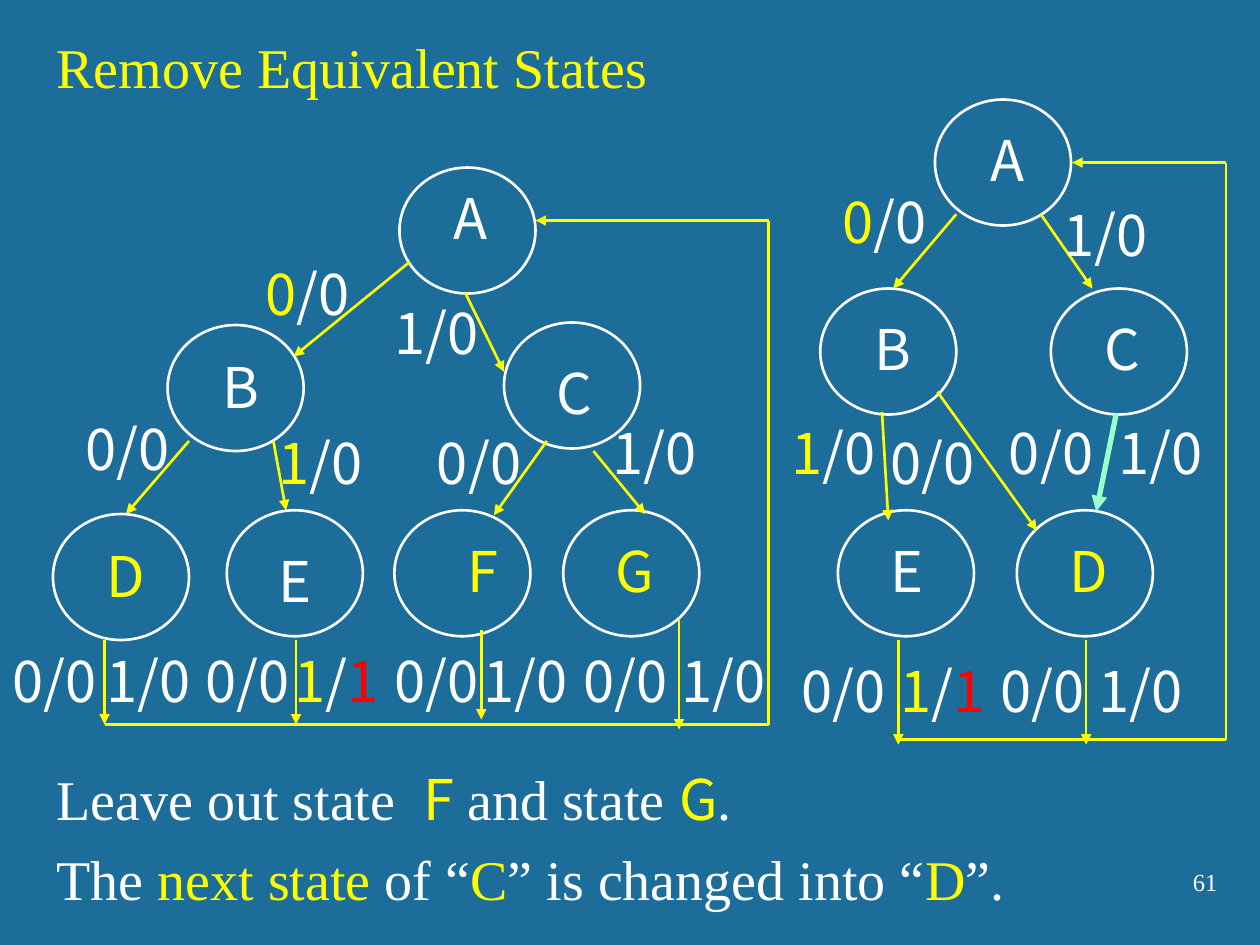
from dataclasses import dataclass

from lxml.etree import SubElement
from pptx import Presentation
from pptx.dml.color import RGBColor
from pptx.enum.shapes import MSO_CONNECTOR as Connector, MSO_SHAPE as Shape
from pptx.enum.text import MSO_AUTO_SIZE as AutoSize, PP_ALIGN as Align
from pptx.oxml.ns import qn
from pptx.util import Inches, Pt


@dataclass(frozen=True)
class Theme:
    background: str = "1C6D9A"
    text: str = "FFFFFF"
    accent: str = "FFFF00"
    output: str = "FF0000"
    changed: str = "99FFCC"
    serif: str = "Times New Roman"
    sans: str = "Noto Sans CJK SC"
    body_size: int = 32
    number_size: int = 14
    thin: float = 1.5
    thick: float = 3


@dataclass(frozen=True)
class Box:
    left: float
    top: float
    width: float
    height: float


@dataclass(frozen=True)
class Diagram:
    """Places are in grid units, measured from the corner of the diagram's box."""
    states: list        # name, x, y, label offset x, label offset y
    transitions: list   # x1, y1, x2, y2
    labels: list        # runs, x, y
    output_row: float
    outputs: list       # runs, x
    drops: list         # x, y1, y2
    return_row: float
    return_tip: float
    changed: tuple = ()


THEME = Theme()
COLUMNS = 100
SLIDE_WIDTH, SLIDE_HEIGHT = Inches(10), Inches(7.5)
UNIT = SLIDE_WIDTH / COLUMNS
STATE_WIDTH, STATE_HEIGHT = 10.8, 10
LETTER_WIDTH, PAIR_WIDTH, LABEL_HEIGHT = 4.2, 8.7, 6.3
EQUIVALENT = "DFG"

ZERO = [("0/0", THEME.text)]
ONE = [("1/0", THEME.text)]
ZERO_MARKED = [("0", THEME.accent), ("/0", THEME.text)]
ONE_MARKED = [("1", THEME.accent), ("/0", THEME.text)]
DETECTED = [("1", THEME.accent), ("/", THEME.text), ("1", THEME.output)]

FULL = Diagram(
    states=[("A", 31.7, 0, 3.3, 0.8), ("B", 13.3, 12.5, 3.4, 1.7),
            ("C", 40, 12.3, 3.2, 2.4), ("D", 4.2, 27.5, 3.3, 1.7),
            ("E", 18, 27.2, 3.1, 2.4), ("F", 31.3, 27.2, 4.8, 1.6),
            ("G", 44.7, 27.2, 3.2, 1.6)],
    transitions=[(32.5, 7.5, 23.3, 15), (36.9, 9.9, 40, 16.2),
                 (15, 21.7, 10, 27.5), (21.7, 21.7, 22.7, 27.2),
                 (43.4, 21.7, 39.2, 27.6), (47.1, 22.5, 51.2, 27.5)],
    labels=[(ZERO_MARKED, 20.1, 6.8), (ONE, 30.3, 9.9), (ZERO, 5.8, 19.1),
            (ONE_MARKED, 21.1, 20.2), (ZERO, 33.7, 20.2), (ONE, 47.6, 19.4)],
    output_row=37.5,
    outputs=[(ZERO, 0), (ONE, 7.5), (ZERO, 15.3), (DETECTED, 22.4),
             (ZERO, 30.3), (ONE, 37.4), (ZERO, 45.3), (ONE, 53.1)],
    drops=[(8.3, 37.5, 44.2), (23.5, 37.5, 44.2),
           (38.2, 36.7, 43.8), (53.9, 35.9, 44.6)],
    return_row=4.2, return_tip=42.5)

REDUCED = Diagram(
    states=[("A", 12.4, 0, 3.4, 1.6), ("B", 3.3, 15, 3.3, 1.6),
            ("C", 21.6, 15, 3.3, 1.6), ("E", 4.7, 32.6, 3.2, 1.6),
            ("D", 18.9, 32.6, 3.2, 1.6)],
    transitions=[(14.1, 9.1, 9.1, 15), (20.8, 9.1, 24.9, 15),
                 (12.6, 23.2, 20.5, 34.2), (8.2, 24.8, 8.7, 33.4)],
    labels=[(ZERO_MARKED, 4.1, 6.5), (ONE, 21.6, 7.5), (ONE_MARKED, 0, 24.8),
            (ZERO, 7.9, 25.6), (ZERO, 17.3, 24.8), (ONE, 26, 24.8)],
    output_row=43.7,
    outputs=[(ZERO, 0.8), (DETECTED, 8.7), (ZERO, 16.6), (ONE, 24.4)],
    drops=[(9.5, 42.9, 51.2), (24.4, 42.9, 51.2)],
    return_row=5, return_tip=23.3,
    changed=(26.8, 24.9, 25.2, 32.7))


def grid(*lengths):
    return [round(length * UNIT) for length in lengths]


def add_text(slide, box, runs, font=THEME.serif, size=THEME.body_size,
             align=Align.LEFT, wrap=False):
    """Each run is (text, colour) or (text, colour, font)."""
    shape = slide.shapes.add_textbox(*grid(box.left, box.top, box.width, box.height))
    frame = shape.text_frame
    frame.word_wrap = wrap
    frame.auto_size = AutoSize.NONE if wrap else AutoSize.SHAPE_TO_FIT_TEXT
    paragraph = frame.paragraphs[0]
    paragraph.alignment = align
    for text, color, *own_font in runs:
        run = paragraph.add_run()
        run.text = text
        run.font.name = own_font[0] if own_font else font
        run.font.size = Pt(size)
        run.font.color.rgb = RGBColor.from_string(color)


def add_line(slide, box, ends, color=THEME.accent, width=THEME.thin, arrow=True):
    x1, y1, x2, y2 = ends
    line = slide.shapes.add_connector(Connector.STRAIGHT, *grid(
        box.left + x1, box.top + y1, box.left + x2, box.top + y2))
    line.line.color.rgb = RGBColor.from_string(color)
    line.line.width = Pt(width)
    if arrow:
        SubElement(line.line._get_or_add_ln(), qn("a:tailEnd"), type="triangle")
    SubElement(line._element.spPr, qn("a:effectLst"))


def add_label(slide, box, runs, x, y, width=PAIR_WIDTH):
    place = Box(box.left + x, box.top + y, width, LABEL_HEIGHT)
    add_text(slide, place, runs, font=THEME.sans)


def add_state(slide, box, name, x, y, label_x, label_y):
    circle = slide.shapes.add_shape(Shape.OVAL, *grid(
        box.left + x, box.top + y, STATE_WIDTH, STATE_HEIGHT))
    circle.shadow.inherit = False
    circle.fill.background()
    circle.line.color.rgb = RGBColor.from_string(THEME.text)
    circle.line.width = Pt(THEME.thin)
    color = THEME.accent if name in EQUIVALENT else THEME.text
    add_label(slide, box, [(name, color)], x + label_x, y + label_y, LETTER_WIDTH)


def add_return_path(slide, box, diagram):
    """Leads from the last states back to A, along the box's bottom and right edges."""
    right, bottom = box.width, box.height
    for x, start, end in diagram.drops:
        add_line(slide, box, (x, start, x, end))
    add_line(slide, box, (diagram.drops[0][0], bottom, right, bottom), arrow=False)
    add_line(slide, box, (right, bottom, right, diagram.return_row), arrow=False)
    add_line(slide, box, (right, diagram.return_row,
                          diagram.return_tip, diagram.return_row))


def add_diagram(slide, box, diagram):
    for state in diagram.states:
        add_state(slide, box, *state)
    for ends in diagram.transitions:
        add_line(slide, box, ends)
    if diagram.changed:
        add_line(slide, box, diagram.changed, THEME.changed, THEME.thick)
    add_return_path(slide, box, diagram)
    for runs, x, y in diagram.labels:
        add_label(slide, box, runs, x, y)
    for runs, x in diagram.outputs:
        add_label(slide, box, runs, x, diagram.output_row)


def add_conclusion(slide, box):
    white, yellow, row = THEME.text, THEME.accent, box.height / 2
    add_text(slide, Box(box.left, box.top, 57.4, row), [
        ("Leave out state  ", white), ("F ", yellow, THEME.sans),
        ("and state ", white), ("G", yellow, THEME.sans), (".", white)])
    add_text(slide, Box(box.left, box.top + row, box.width, row), [
        ("The ", white), ("next state ", yellow), ("of “", white), ("C", yellow),
        ("” is changed into “", white), ("D", yellow), ("”.", white)], wrap=True)


def main():
    presentation = Presentation()
    presentation.slide_width, presentation.slide_height = SLIDE_WIDTH, SLIDE_HEIGHT
    slide = presentation.slides.add_slide(presentation.slide_layouts[6])
    slide.background.fill.solid()
    slide.background.fill.fore_color.rgb = RGBColor.from_string(THEME.background)

    add_text(slide, Box(3.5, 2.1, 49.4, 6.4), [("Remove Equivalent States", THEME.accent)])
    add_diagram(slide, Box(0, 13.3, 61, 44.2), FULL)
    add_diagram(slide, Box(61.8, 7.9, 35.5, 50.8), REDUCED)
    add_conclusion(slide, Box(3.5, 60.2, 82.7, 12.6))
    add_text(slide, Box(76.8, 68.3, 20.8, 5), [("61", THEME.text)],
             size=THEME.number_size, align=Align.RIGHT, wrap=True)
    presentation.save("out.pptx")


if __name__ == "__main__":
    main()
